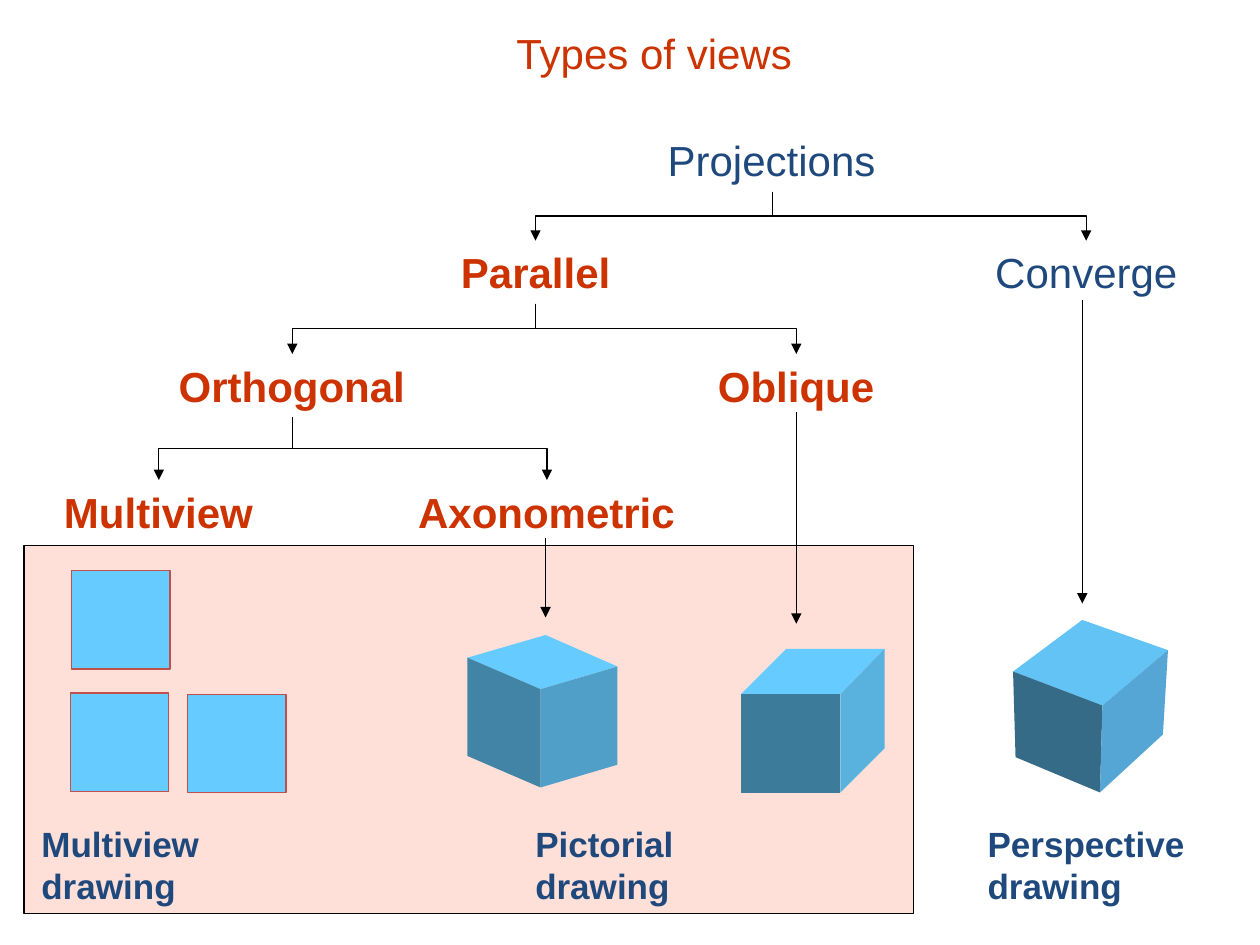
"""Build a slide with a tree of projection types and a sample drawing for each."""
from typing import NamedTuple

from lxml.etree import SubElement
from pptx import Presentation
from pptx.dml.color import RGBColor
from pptx.enum.shapes import MSO_CONNECTOR, MSO_SHAPE
from pptx.enum.text import MSO_AUTO_SIZE
from pptx.oxml.ns import qn
from pptx.util import Inches, Pt

COLUMNS, ROWS = 100, 75
CELL = Inches(0.1)
BLACK = RGBColor(0x00, 0x00, 0x00)
RED = RGBColor(0xCC, 0x33, 0x00)
NAVY = RGBColor(0x1F, 0x49, 0x7D)
PANEL_TINT = RGBColor(0xFF, 0x33, 0x00)
SKY = RGBColor(0x66, 0xCC, 0xFF)
BRICK = RGBColor(0xC0, 0x50, 0x4D)


class Point(NamedTuple):
    column: float
    row: float


class Label(NamedTuple):
    wording: str
    column: float
    row: float
    width: float
    color: RGBColor
    bold: bool = True
    size: int = 24
    height: float = 5
    wraps: bool = False


class Cube(NamedTuple):
    left: Point
    back: Point
    right: Point
    front: Point
    left_base: Point
    front_base: Point
    right_base: Point
    top_color: RGBColor
    left_color: RGBColor
    right_color: RGBColor


class Branch(NamedTuple):
    parent: Point
    children: tuple[Point, ...]


LABELS = (
    Label("Types of views", 40, 1.7, 24.1, RED, bold=False),
    Label("Projections", 52, 10.2, 18.5, NAVY, bold=False),
    Label("Converge", 78, 19.1, 16.5, NAVY, bold=False),
    Label("Parallel", 35.6, 19.1, 13.9, RED),
    Label("Orthogonal", 13.2, 28.1, 20.2, RED),
    Label("Oblique", 56, 28.1, 14.4, RED),
    Label("Axonometric", 32.2, 38.1, 22.4, RED),
    Label("Multiview", 4.1, 38.1, 17, RED),
)
CAPTIONS = (
    Label("Pictorial\vdrawing", 41.5, 64.8, 24.4, NAVY, size=20, height=7.7, wraps=True),
    Label("Perspective\ndrawing", 77.4, 64.8, 17.6, NAVY, size=20, height=7.7),
    Label("Multiview\vdrawing", 2.3, 64.8, 25.9, NAVY, size=20, height=7.7, wraps=True),
)
BRANCHES = (
    Branch(Point(61.3, 15.2), (Point(42.5, 19.1), Point(86.2, 19.1))),
    Branch(Point(42.5, 24.1), (Point(23.2, 28.1), Point(63.2, 28.1))),
    Branch(Point(23.2, 33.1), (Point(12.6, 38.1), Point(43.4, 38.1))),
)
DROPS = (
    (Point(63.2, 32.7), Point(63.2, 49.5)),
    (Point(43.3, 42.7), Point(43.3, 49)),
    (Point(85.9, 23.8), Point(85.9, 47.9)),
)
CUBES = (
    Cube(Point(80.4, 53.3), Point(85.9, 49.2), Point(92.7, 51.6), Point(87.5, 56),
         Point(80.6, 60.1), Point(87.3, 62.9), Point(92.3, 58.3),
         RGBColor(0x62, 0xC3, 0xF4), RGBColor(0x35, 0x6B, 0x86), RGBColor(0x55, 0xA6, 0xD4)),
    Cube(Point(58.8, 55.1), Point(62.4, 51.5), Point(70.2, 51.5), Point(66.7, 55.1),
         Point(58.8, 62.9), Point(66.7, 62.9), Point(70.2, 59.4),
         SKY, RGBColor(0x3D, 0x7B, 0x9A), RGBColor(0x59, 0xB1, 0xDE)),
    Cube(Point(37.1, 52.2), Point(43.3, 50.4), Point(49, 52.9), Point(42.9, 54.7),
         Point(37.1, 60), Point(42.9, 62.5), Point(49, 60.7),
         SKY, RGBColor(0x41, 0x84, 0xA5), RGBColor(0x50, 0x9F, 0xC8)),
)
VIEW_SIDE = 7.8
VIEWS = (Point(5.6, 55), Point(14.9, 55.1), Point(5.7, 45.3))


def span(cells: float) -> int:
    """Return the length of a number of grid cells."""
    return round(cells * CELL)


def add_box(shapes, corner: Point, width: float, height: float, fill: RGBColor, line: RGBColor):
    """Draw an outlined rectangle."""
    box = shapes.add_shape(MSO_SHAPE.RECTANGLE, span(corner.column), span(corner.row),
                           span(width), span(height))
    box.shadow.inherit = False
    box.fill.solid()
    box.fill.fore_color.rgb = fill
    box.line.color.rgb = line
    box.line.width = Pt(0.75)
    return box


def add_panel(shapes) -> None:
    """Draw the translucent panel behind the parallel projections."""
    panel = add_box(shapes, Point(1.9, 43.3), 70.6, 29.2, PANEL_TINT, BLACK)
    tint = panel._element.spPr.find(qn("a:solidFill"))[0]
    SubElement(tint, qn("a:alpha"), val="15000")


def add_label(shapes, label: Label) -> None:
    """Write one label or caption."""
    frame = shapes.add_textbox(span(label.column), span(label.row),
                               span(label.width), span(label.height)).text_frame
    frame.word_wrap = label.wraps
    frame.auto_size = MSO_AUTO_SIZE.SHAPE_TO_FIT_TEXT
    frame.text = label.wording
    for paragraph in frame.paragraphs:
        for run in paragraph.runs:
            run.font.name = "Arial"
            run.font.size = Pt(label.size)
            run.font.bold = label.bold
            run.font.color.rgb = label.color


def add_arrow(shapes, kind: MSO_CONNECTOR, start: Point, end: Point):
    """Draw a thin black connector with a triangular head."""
    arrow = shapes.add_connector(kind, span(start.column), span(start.row),
                                 span(end.column), span(end.row))
    arrow.line.color.rgb = BLACK
    arrow.line.width = Pt(0.75)
    SubElement(arrow._element.spPr.find(qn("a:ln")), qn("a:tailEnd"), type="triangle")
    SubElement(arrow._element.spPr, qn("a:effectLst"))
    return arrow


def add_branch(shapes, branch: Branch) -> None:
    """Draw elbow arrows that leave the parent downwards, by a quarter turn."""
    parent = branch.parent
    for child in branch.children:
        middle = Point((parent.column + child.column) / 2, (parent.row + child.row) / 2)
        rightward = child.column > parent.column
        reach = abs(child.column - parent.column) / 2
        drop = (child.row - parent.row) / 2 * (1 if rightward else -1)
        arrow = add_arrow(shapes, MSO_CONNECTOR.ELBOW,
                          Point(middle.column + drop, middle.row - reach),
                          Point(middle.column - drop, middle.row + reach))
        quarter_turns = 3 if rightward else 1
        arrow._element.spPr.find(qn("a:xfrm")).set("rot", str(quarter_turns * 5400000))


def add_cube(shapes, cube: Cube) -> None:
    """Draw the three visible faces of a cube."""
    faces = (
        (cube.top_color, (cube.left, cube.back, cube.right, cube.front)),
        (cube.left_color, (cube.left, cube.front, cube.front_base, cube.left_base)),
        (cube.right_color, (cube.front, cube.right, cube.right_base, cube.front_base)),
    )
    for color, corners in faces:
        first, *others = [(span(corner.column), span(corner.row)) for corner in corners]
        outline = shapes.build_freeform(*first)
        outline.add_line_segments(others, close=True)
        face = outline.convert_to_shape()
        face.shadow.inherit = False
        face.fill.solid()
        face.fill.fore_color.rgb = color
        face.line.fill.background()


def main() -> None:
    """Build and save the slide."""
    deck = Presentation()
    deck.slide_width, deck.slide_height = span(COLUMNS), span(ROWS)
    shapes = deck.slides.add_slide(deck.slide_layouts[6]).shapes
    add_panel(shapes)
    for label in LABELS:
        add_label(shapes, label)
    for branch in BRANCHES:
        add_branch(shapes, branch)
    for cube in CUBES:
        add_cube(shapes, cube)
    for corner in VIEWS:
        add_box(shapes, corner, VIEW_SIDE, VIEW_SIDE, SKY, BRICK)
    for caption in CAPTIONS:
        add_label(shapes, caption)
    for start, end in DROPS:
        add_arrow(shapes, MSO_CONNECTOR.STRAIGHT, start, end)
    deck.save("out.pptx")


if __name__ == "__main__":
    main()
